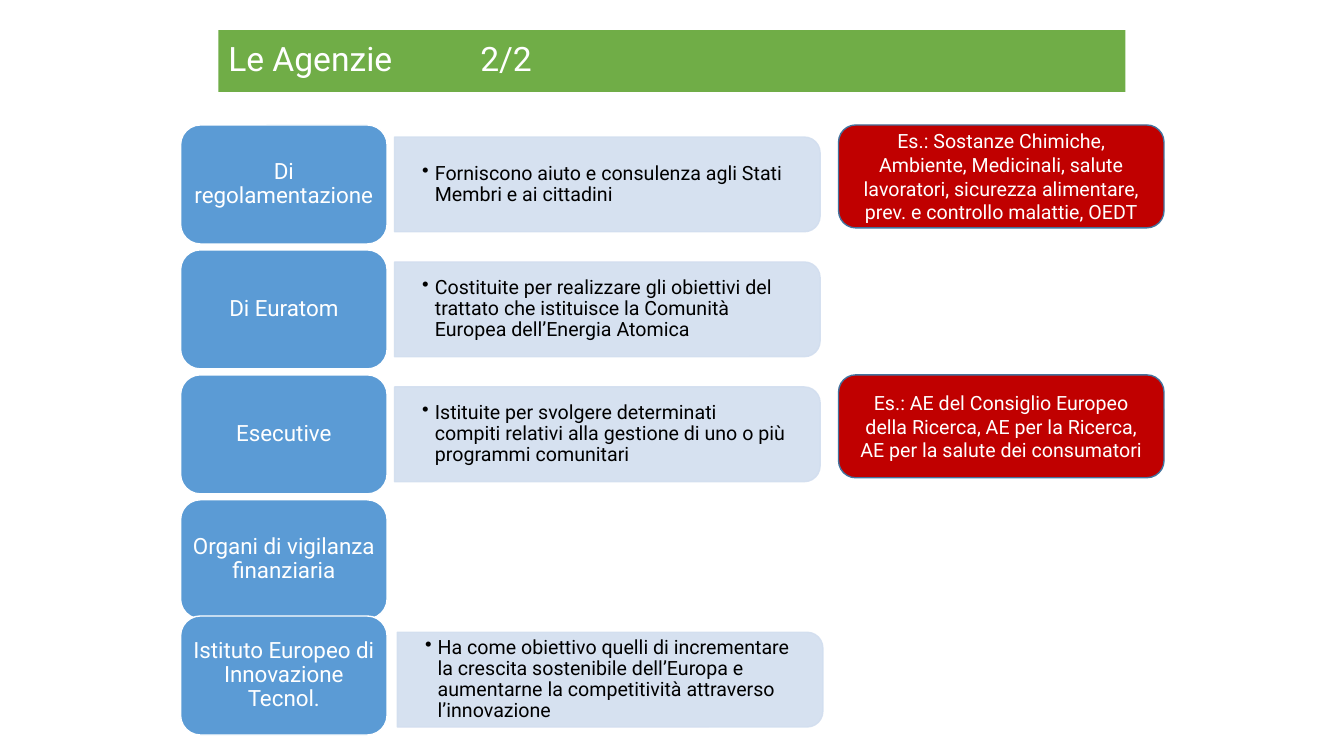
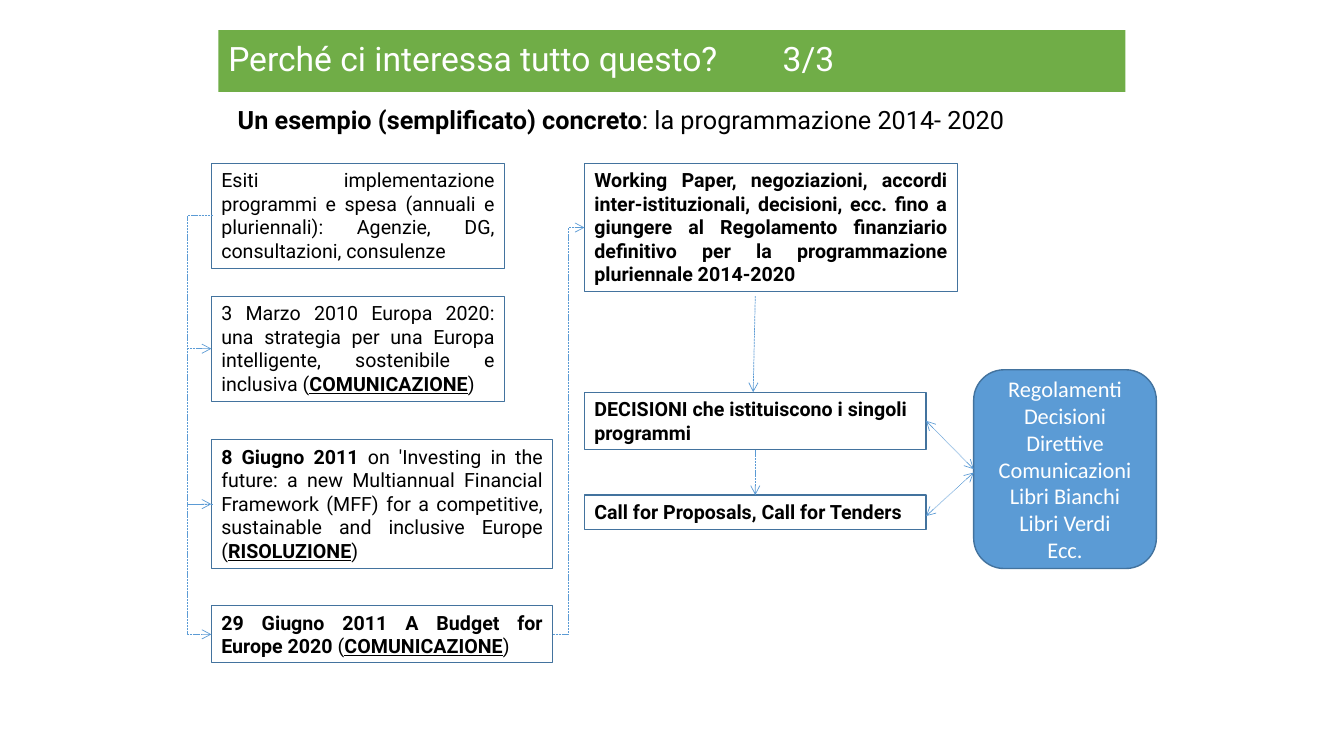
from lxml import etree
from pptx import Presentation
from pptx.dml.color import RGBColor
from pptx.enum.dml import MSO_LINE
from pptx.enum.shapes import MSO_CONNECTOR, MSO_SHAPE
from pptx.enum.text import MSO_ANCHOR, PP_ALIGN
from pptx.oxml.ns import qn
from pptx.util import Pt

RECT = MSO_SHAPE.RECTANGLE
ROUNDED = MSO_SHAPE.ROUNDED_RECTANGLE
TWO_ROUNDED = MSO_SHAPE.ROUND_2_SAME_RECTANGLE
STRAIGHT, ELBOW = MSO_CONNECTOR.STRAIGHT, MSO_CONNECTOR.ELBOW
DASH, DOT = MSO_LINE.SQUARE_DOT, MSO_LINE.ROUND_DOT
LEFT, CENTER, JUSTIFY = PP_ALIGN.LEFT, PP_ALIGN.CENTER, PP_ALIGN.JUSTIFY
TOP, MIDDLE = MSO_ANCHOR.TOP, MSO_ANCHOR.MIDDLE
SIDE_TOP, SIDE_LEFT, SIDE_BOTTOM, SIDE_RIGHT = range(4)

GREEN = RGBColor(0x70, 0xAD, 0x47)
BLUE = RGBColor(0x5B, 0x9B, 0xD5)
PALE_BLUE = RGBColor(0xD2, 0xDE, 0xEF)
OUTLINE = RGBColor(0x43, 0x73, 0x9E)
RED = RGBColor(0xC0, 0x00, 0x00)
WHITE = RGBColor(0xFF, 0xFF, 0xFF)
BLACK = RGBColor(0x00, 0x00, 0x00)

ROW_PITCH = 89.25
TILE_WIDTH, TILE_HEIGHT = 147.5, 85
PANEL_WIDTH, PANEL_HEIGHT = 304, 67.7
NOTE_WIDTH, NOTE_HEIGHT = 232.5, 73.5

AGENCIES = [
    ("Di regolamentazione",
     "Forniscono aiuto e consulenza agli Stati Membri e ai cittadini",
     "Es.: Sostanze Chimiche, Ambiente, Medicinali, salute lavoratori, "
     "sicurezza alimentare, prev. e controllo malattie, OEDT"),
    ("Di Euratom",
     "Costituite per realizzare gli obiettivi del trattato che istituisce "
     "la Comunità Europea dell’Energia Atomica", None),
    ("Esecutive",
     "Istituite per svolgere determinati compiti relativi alla gestione "
     "di uno o più programmi comunitari",
     "Es.: AE del Consiglio Europeo della Ricerca, AE per la Ricerca, "
     "AE per la salute dei consumatori"),
    ("Organi di vigilanza finanziaria", None, None),
]
INSTITUTE = (
    "Istituto Europeo di Innovazione Tecnol.",
    "Ha come obiettivo quelli di incrementare la crescita sostenibile "
    "dell’Europa e aumentarne la competitività attraverso l’innovazione", None)

STAGES = [
    (0, 209.5, 75,
     [("Esiti implementazione programmi e spesa (annuali e pluriennali): "
       "Agenzie, DG, consultazioni, consulenze", "")]),
    (95, 209.5, 75,
     [("3 Marzo 2010 Europa 2020: una strategia per una Europa intelligente, "
       "sostenibile e inclusiva (", ""), ("COMUNICAZIONE", "bu"), (")", "")]),
    (197.5, 244, 92,
     [("8 Giugno 2011 ", "b"),
      ("on 'Investing in the future: a new Multiannual Financial Framework "
       "(MFF) for a competitive, sustainable and inclusive Europe (", ""),
      ("RISOLUZIONE", "bu"), (")", "")]),
    (316, 244, 41,
     [("29 Giugno 2011 A Budget for Europe 2020 ", "b"), ("(", ""),
      ("COMUNICAZIONE", "bu"), (")", "")]),
]
STAGE_LINKS = [(0, 1), (0, 2), (2, 3)]

OUTCOMES = [
    (0, 266.5, 92, JUSTIFY,
     "Working Paper, negoziazioni, accordi inter-istituzionali, decisioni, "
     "ecc. fino a giungere al Regolamento finanziario definitivo per la "
     "programmazione pluriennale 2014-2020"),
    (163.5, 244, 41, LEFT, "DECISIONI che istituiscono i singoli programmi"),
    (237, 244, 24.5, LEFT, "Call for Proposals, Call for Tenders"),
]
ACTS = ["Regolamenti", "Decisioni", "Direttive", "Comunicazioni",
        "Libri Bianchi", "Libri Verdi", "Ecc."]


def write(shape, lines, size=14, color=BLACK, font="Roboto", align=LEFT,
          anchor=MIDDLE, insets=(7.2, 3.6), spacing=1.0, bullet=False,
          wrap=True):
    """Fill a shape with paragraphs, each a string or a list of (text, style)."""
    frame = shape.text_frame
    frame.word_wrap = wrap
    frame.vertical_anchor = anchor
    frame.margin_left = frame.margin_right = Pt(insets[0])
    frame.margin_top = frame.margin_bottom = Pt(insets[1])
    for index, line in enumerate(lines):
        para = frame.add_paragraph() if index else frame.paragraphs[0]
        para.alignment = align
        para.line_spacing = spacing
        if bullet:
            properties = para._p.get_or_add_pPr()
            properties.set("marL", str(Pt(9)))
            properties.set("indent", str(-Pt(9)))
            etree.SubElement(properties, qn("a:buChar"), char="•")
        for text, style in [(line, "")] if isinstance(line, str) else line:
            span = para.add_run()
            span.text = text
            span.font.name = font
            span.font.size = Pt(size)
            span.font.color.rgb = color
            span.font.bold = "b" in style
            span.font.underline = "u" in style


def add_box(page, kind, left, top, width, height, fill=None, line=None,
            weight=1):
    """Add a preset shape with a plain fill and outline."""
    shape = page.shapes.add_shape(kind, Pt(left), Pt(top), Pt(width), Pt(height))
    shape.shadow.inherit = False
    if fill is None:
        shape.fill.background()
    else:
        shape.fill.solid()
        shape.fill.fore_color.rgb = fill
    if line is None:
        shape.line.fill.background()
    else:
        shape.line.color.rgb = line
        shape.line.width = Pt(weight)
    return shape


def add_text(page, left, top, width, height, lines, **style):
    """Add a text box."""
    box = page.shapes.add_textbox(Pt(left), Pt(top), Pt(width), Pt(height))
    write(box, lines, **style)


def add_arrow(page, start, end, kind=STRAIGHT, dash=DASH, double=False,
              bend=None):
    """Add a thin dashed arrow, its elbow bent at a multiple of its width."""
    arrow = page.shapes.add_connector(kind, *(Pt(v) for v in (*start, *end)))
    arrow.line.color.rgb = BLUE
    arrow.line.width = Pt(0.5)
    arrow.line.dash_style = dash
    properties = arrow._element.spPr
    outline = properties.find(qn("a:ln"))
    for name in ("a:headEnd", "a:tailEnd") if double else ("a:tailEnd",):
        etree.SubElement(outline, qn(name), type="arrow")
    etree.SubElement(properties, qn("a:effectLst"))
    if bend is not None:
        guides = properties.find(qn("a:prstGeom")).find(qn("a:avLst"))
        etree.SubElement(guides, qn("a:gd"), name="adj1",
                         fmla=f"val {bend * 100000}")
    return arrow


def join(page, first, first_side, second, second_side, **style):
    """Join two shapes at the middles of their sides."""
    arrow = add_arrow(page, (0, 0), (0, 0), **style)
    arrow.begin_connect(first, first_side)
    arrow.end_connect(second, second_side)


def add_page(deck, title):
    """Add a blank slide with the green title band."""
    page = deck.slides.add_slide(deck.slide_layouts[6])
    band = add_box(page, RECT, 156, 21.6, 648, 44, fill=GREEN)
    write(band, [title], size=24, color=WHITE, spacing=0.9)
    return page


def add_panel(page, left, top, text):
    """Add a pale panel, rounded on its right side, with one bullet."""
    panel = add_box(page, TWO_ROUNDED,
                    left + (PANEL_WIDTH - PANEL_HEIGHT) / 2,
                    top + (PANEL_HEIGHT - PANEL_WIDTH) / 2,
                    PANEL_HEIGHT, PANEL_WIDTH, fill=PALE_BLUE, line=PALE_BLUE)
    panel.rotation = 90
    for color in panel._element.spPr.iter(qn("a:srgbClr")):
        etree.SubElement(color, qn("a:alpha"), val="90000")
    add_text(page, left, top + 3.3, PANEL_WIDTH - 3.5, PANEL_HEIGHT - 6.6,
             [text], insets=(19.8, 10), spacing=0.9, bullet=True)


def add_agency(page, left, top, agency, shift=(0, 0)):
    """Add a row: name tile, description panel and examples."""
    name, description, examples = agency
    tile = add_box(page, ROUNDED, left, top, TILE_WIDTH, TILE_HEIGHT,
                   fill=BLUE, line=WHITE)
    write(tile, [name], size=16, color=WHITE, align=CENTER,
          insets=(4.5, 2.2), spacing=0.9)
    if description:
        add_panel(page, left + 152.8 + shift[0],
                  top + (TILE_HEIGHT - PANEL_HEIGHT) / 2 + shift[1],
                  description)
    if examples:
        note = add_box(page, ROUNDED, left + 470, top, NOTE_WIDTH, NOTE_HEIGHT,
                       fill=RED, line=OUTLINE)
        write(note, [examples], color=WHITE, align=CENTER)


def add_stages(page, left, top):
    """Add the column of stages with its side arrows and return the last box."""
    boxes, middles = [], []
    for offset, width, height, line in STAGES:
        box = add_box(page, RECT, left, top + offset, width, height,
                      line=OUTLINE, weight=0.75)
        write(box, [line], align=JUSTIFY, anchor=TOP)
        boxes.append(box)
        middles.append(top + offset + height / 2)
    for first, second in STAGE_LINKS:
        add_arrow(page, (left + 1, middles[first]), (left, middles[second]),
                  kind=ELBOW, bend=18)
    return boxes[-1]


def add_outcomes(page, left, top):
    """Add the column of outcomes, linked to the legal acts beside it."""
    boxes = []
    for offset, width, height, align, text in OUTCOMES:
        box = add_box(page, RECT, left, top + offset, width, height,
                      line=OUTLINE, weight=0.75)
        write(box, [[(text, "b")]], align=align, anchor=TOP)
        boxes.append(box)
    paper, decisions, calls = boxes
    acts = add_box(page, ROUNDED, left + 278, top + 147.5, 130.5, 142,
                   fill=BLUE, line=OUTLINE)
    write(acts, ACTS, size=16, color=WHITE, font="Calibri", align=CENTER)
    add_arrow(page, (left + 122, top + 95), (left + 120.5, top + 163.5))
    join(page, decisions, SIDE_BOTTOM, calls, SIDE_TOP)
    join(page, decisions, SIDE_RIGHT, acts, SIDE_LEFT, dash=DOT, double=True)
    add_arrow(page, (left + 244, top + 252), (left + 278, top + 221),
              dash=DOT, double=True)
    return paper


def build_agencies(deck):
    """Build the slide of agency types."""
    page = add_page(deck, "Le Agenzie\t\t2/2")
    for index, agency in enumerate(AGENCIES):
        add_agency(page, 129, ROW_PITCH * (index + 1), agency)
    add_agency(page, 129, 440, INSTITUTE, shift=(2, 3))


def build_example(deck):
    """Build the slide of the programming example."""
    page = add_page(deck, "Perché ci interessa tutto questo?\t\t3/3")
    add_text(page, 162.7, 71.3, 580, 29,
             [[("Un esempio (semplificato) concreto", "b"),
               (": la programmazione 2014- 2020", "")]],
             size=18, anchor=TOP, wrap=False)
    budget = add_stages(page, 151, 116.6)
    paper = add_outcomes(page, 417.5, 116.6)
    join(page, budget, SIDE_RIGHT, paper, SIDE_LEFT, kind=ELBOW)


def main():
    """Build and save the deck."""
    deck = Presentation()
    deck.slide_width, deck.slide_height = Pt(960), Pt(540)
    build_agencies(deck)
    build_example(deck)
    deck.save("out.pptx")


if __name__ == "__main__":
    main()
